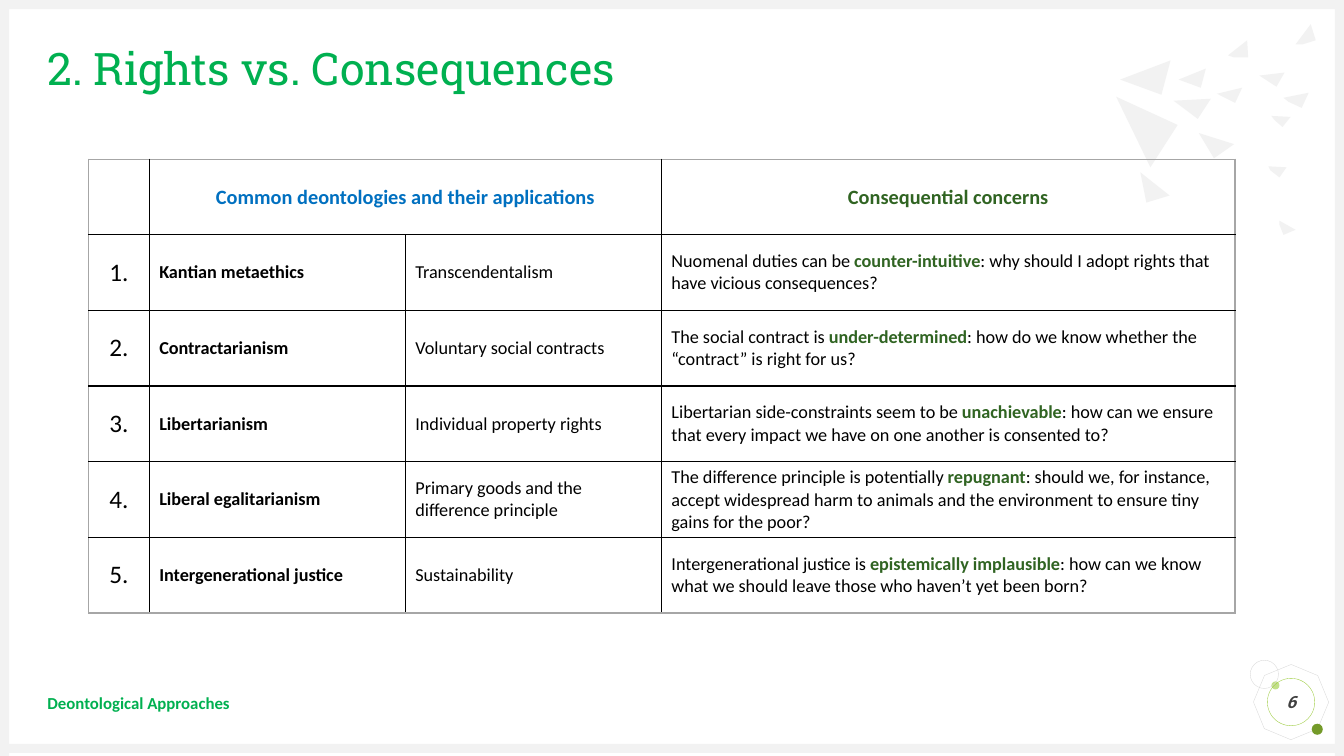
from pptx import Presentation
from pptx.dml.color import RGBColor
from pptx.enum.shapes import MSO_SHAPE
from pptx.enum.text import MSO_ANCHOR, PP_ALIGN
from pptx.oxml.ns import qn
from pptx.util import Inches, Pt
from lxml.etree import SubElement

HUES = {
    "title": "00B050", "blue": "0070C0", "leaf": "306422", "ink": "000000",
    "dark": "404040", "pale": "F2F2F2", "edge": "D9D9D9", "rim": "A6A6A6",
    "lime": "C2E088", "moss": "749A29", "ring": "9ACB39",
}

SHARDS = [
    [(11.61, 0.6), (11.52, 0.94), (11.11, 0.79)],
    [(12.01, 0.98), (11.88, 1.18), (11.64, 1)],
    [(11.96, 0.68), (11.91, 0.87), (11.69, 0.79)],
    [(12.32, 0.87), (12.25, 1.02), (12.07, 0.93)],
    [(12.37, 0.4), (12.38, 0.57), (12.24, 0.57), (12.18, 0.55)],
    [(12.8, 1.16), (12.72, 1.26), (12.64, 1.19), (12.61, 1.15)],
    [(13, 0.24), (13.05, 0.4), (12.92, 0.44), (12.85, 0.44)],
    [(12.74, 0.72), (12.66, 0.86), (12.49, 0.75)],
    [(12.98, 0.92), (12.91, 1.07), (12.78, 1.01), (12.73, 0.97)],
    [(11.68, 1.24), (11.41, 1.66), (11.07, 0.96)],
    [(12.24, 1.43), (12.04, 1.57), (11.89, 1.32)],
    [(12.76, 1.66), (12.69, 1.76), (12.6, 1.69), (12.58, 1.65)],
    [(11.6, 1.94), (11.37, 2.01), (11.31, 1.71)],
    [(12.85, 2.28), (12.73, 2.33), (12.69, 2.23), (12.69, 2.19)],
]

ROWS = [
    ("Kantian metaethics", "Transcendentalism",
     ("Nuomenal duties can be ", "counter-intuitive",
      ": why should I adopt rights that have vicious consequences?")),
    ("Contractarianism", "Voluntary social contracts",
     ("The social contract is ", "under-determined",
      ": how do we know whether the “contract” is right for us?")),
    ("Libertarianism", "Individual property rights",
     ("Libertarian side-constraints seem to be ", "unachievable",
      ": how can we ensure that every impact we have on one another is consented to?")),
    ("Liberal egalitarianism", "Primary goods and the difference principle",
     ("The difference principle is potentially ", "repugnant",
      ": should we, for instance, accept widespread harm to animals and the "
      "environment to ensure tiny gains for the poor?")),
    ("Intergenerational justice", "Sustainability",
     ("Intergenerational justice is ", "epistemically implausible",
      ": how can we know what we should leave those who haven’t yet been born?")),
]


class Deck:
    body = "Calibri"
    head = "Roboto Slab"

    def __init__(self):
        self.file = Presentation()
        self.file.slide_width = Inches(13.33)
        self.file.slide_height = Inches(7.5)
        self.slide = self.file.slides.add_slide(self.file.slide_layouts[6])

    def hue(self, name):
        return RGBColor.from_string(HUES[name])

    def paint(self, shape, fill=None, line=None):
        shape.shadow.inherit = False
        if fill:
            shape.fill.solid()
            shape.fill.fore_color.rgb = self.hue(fill)
        else:
            shape.fill.background()
        if line:
            shape.line.color.rgb = self.hue(line)
            shape.line.width = Pt(0.25)
        else:
            shape.line.fill.background()

    def shape(self, kind, box, fill=None, line=None, turn=0):
        item = self.slide.shapes.add_shape(kind, *map(Inches, box))
        item.rotation = turn
        self.paint(item, fill, line)
        return item

    def shard(self, spots):
        first, *rest = [(Inches(x), Inches(y)) for x, y in spots]
        form = self.slide.shapes.build_freeform(*first)
        form.add_line_segments(rest, close=True)
        self.paint(form.convert_to_shape(), "pale")

    def words(self, para, text, size, color="ink", bold=False, font=None,
              align=PP_ALIGN.LEFT):
        para.alignment = align
        para.font.size = Pt(size)
        para.font.name = font or self.body
        parts = [text] if isinstance(text, str) else text
        for spot, part in enumerate(parts):
            run = para.add_run()
            run.text = part
            key = spot == 1
            face = run.font if len(parts) > 1 else para.font
            face.bold = key or bold
            face.color.rgb = self.hue("leaf" if key else color)

    def frame(self, shape):
        frame = shape.text_frame
        frame.margin_left = frame.margin_right = 0
        frame.margin_top = frame.margin_bottom = 0
        frame.word_wrap = True
        frame.vertical_anchor = MSO_ANCHOR.MIDDLE
        return frame.paragraphs[0]

    def label(self, box, text, size, color, **style):
        area = self.slide.shapes.add_textbox(*map(Inches, box))
        para = self.frame(area)
        self.words(para, text, size, color, **style)
        return para

    def border(self, cell, rims):
        props = cell._tc.get_or_add_tcPr()
        for side in "LRTB":
            line = SubElement(props, qn(f"a:ln{side}"), w=str(Pt(1)))
            fill = SubElement(line, qn("a:solidFill"))
            color = HUES["rim" if side in rims else "ink"]
            SubElement(fill, qn("a:srgbClr"), val=color)

    def table(self, box, wide, count):
        grid = self.slide.shapes.add_table(
            count, len(wide), *map(Inches, box)).table
        grid.first_row = grid.horz_banding = False
        for col, width in zip(grid.columns, wide):
            col.width = Inches(width)
        last = len(wide) - 1
        for r, row in enumerate(grid.rows):
            row.height = Inches(0.75)
            for c, cell in enumerate(row.cells):
                rims = "".join(side for side, edge in (
                    ("L", c == 0), ("R", c == last),
                    ("T", r == 0), ("B", r == count - 1)) if edge)
                self.border(cell, rims)
                cell.fill.background()
                cell.vertical_anchor = MSO_ANCHOR.MIDDLE
        return grid

    def cell(self, grid, row, col, text, size=13, **style):
        para = grid.cell(row, col).text_frame.paragraphs[0]
        self.words(para, text, size, **style)


def main():
    deck = Deck()
    mid = PP_ALIGN.CENTER
    oval = MSO_SHAPE.OVAL

    deck.shape(MSO_SHAPE.OCTAGON, (12.46, 6.62, 0.69, 0.69), line="edge", turn=22.7)
    deck.shape(oval, (12.61, 6.76, 0.08, 0.08), "lime")
    deck.shape(oval, (13.01, 7.18, 0.11, 0.11), "moss")
    deck.shape(oval, (12.4, 6.55, 0.28, 0.28), line="edge")
    for bar in ((0, 7.38, 13.33, 0.09), (0, 0, 13.33, 0.09),
                (0, 0, 0.09, 7.5), (13.24, 0, 0.09, 7.5)):
        deck.shape(MSO_SHAPE.RECTANGLE, bar, "pale")
    for spots in SHARDS:
        deck.shard(spots)

    title = deck.label((0.47, 0.47, 12.4, 0.47), "2. Rights vs. Consequences",
                       32, "title", font=deck.head)
    title.line_spacing = 0.9
    deck.label((0.47, 6.77, 9.61, 0.4), "Deontological Approaches",
               12, "title", bold=True)
    badge = deck.frame(deck.shape(oval, (12.57, 6.73, 0.47, 0.47), line="ring"))
    deck.words(badge, "6", 12, "dark", bold=True, font=deck.head, align=mid)
    badge.font.italic = True

    grid = deck.table((0.88, 1.58, 11.37, 4.5), (0.6, 2.54, 2.54, 5.69),
                      len(ROWS) + 1)
    grid.cell(0, 1).merge(grid.cell(0, 2))
    for col, text, color in (
            (1, "Common deontologies and their applications", "blue"),
            (3, "Consequential concerns", "leaf")):
        deck.cell(grid, 0, col, text, 14.5, color=color, bold=True, align=mid)
    for row, (name, use, worry) in enumerate(ROWS, 1):
        deck.cell(grid, row, 0, f"{row}.", 18, align=mid)
        deck.cell(grid, row, 1, name, bold=True)
        deck.cell(grid, row, 2, use)
        deck.cell(grid, row, 3, worry)

    deck.file.save("out.pptx")


if __name__ == "__main__":
    main()
